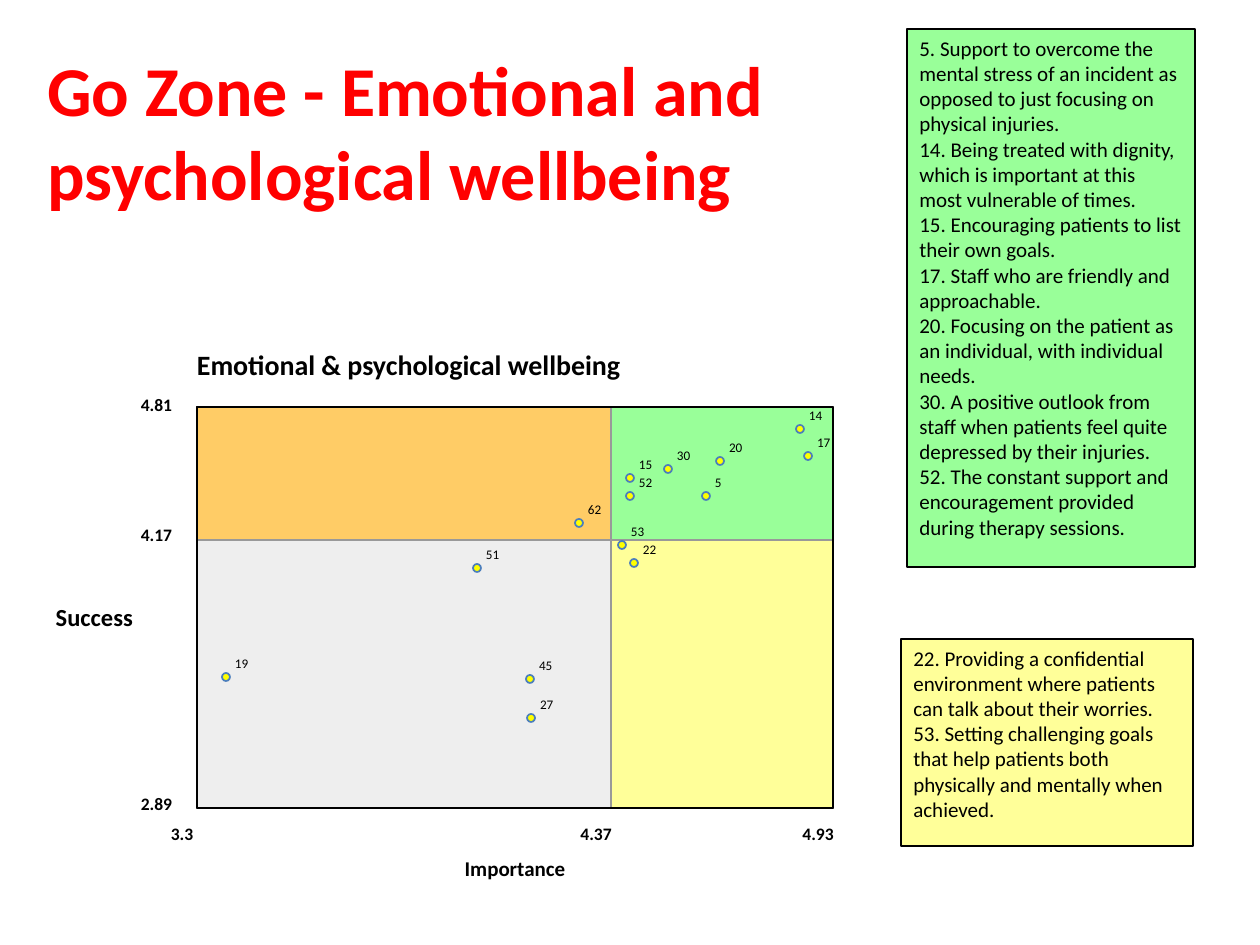
from typing import NamedTuple

from lxml.etree import SubElement
from pptx import Presentation
from pptx.dml.color import RGBColor
from pptx.enum.shapes import MSO_CONNECTOR, MSO_SHAPE
from pptx.enum.text import MSO_ANCHOR, PP_ALIGN
from pptx.oxml.ns import qn
from pptx.util import Emu, Pt

PX = 914400 / 126
FONT = "Calibri"

BLACK = RGBColor(0x00, 0x00, 0x00)
RED = RGBColor(0xFF, 0x00, 0x00)
ORANGE = RGBColor(0xFF, 0xCC, 0x66)
GREEN = RGBColor(0x99, 0xFF, 0x99)
GREY = RGBColor(0xEE, 0xEE, 0xEE)
YELLOW = RGBColor(0xFF, 0xFF, 0x99)
DIVIDER = RGBColor(0x99, 0x99, 0x99)
DOT_FILL = RGBColor(0xFF, 0xFF, 0x00)
DOT_LINE = RGBColor(0x4B, 0x7E, 0xBC)

# Plot edges and the dividers between its zones
LEFT, MID_X, RIGHT = 197, 611, 833
TOP, MID_Y, BOTTOM = 407, 540, 808
DOT = 8


class Box(NamedTuple):
    left: int
    top: int
    width: int
    height: int


class Zone(NamedTuple):
    box: Box
    fill: RGBColor


class Statement(NamedTuple):
    number: str
    x: int
    y: int


class Label(NamedTuple):
    text: str
    x: int
    y: int
    size: float
    align: PP_ALIGN = PP_ALIGN.LEFT
    bold: bool = True


class Note(NamedTuple):
    box: Box
    fill: RGBColor
    lines: tuple[str, ...]


# Share of a label's width that lies left of its anchor point
SHARE_LEFT = {PP_ALIGN.LEFT: 0, PP_ALIGN.CENTER: 0.5, PP_ALIGN.RIGHT: 1}

ZONES = (
    Zone(Box(LEFT, TOP, MID_X - LEFT, MID_Y - TOP), ORANGE),
    Zone(Box(MID_X, TOP, RIGHT - MID_X, MID_Y - TOP), GREEN),
    Zone(Box(LEFT, MID_Y, MID_X - LEFT, BOTTOM - MID_Y), GREY),
    Zone(Box(MID_X, MID_Y, RIGHT - MID_X, BOTTOM - MID_Y), YELLOW),
)

STATEMENTS = (
    Statement("5", 706, 496),
    Statement("14", 800, 429),
    Statement("15", 630, 478),
    Statement("17", 808, 456),
    Statement("20", 720, 461),
    Statement("30", 668, 469),
    Statement("52", 630, 496),
    Statement("19", 226, 677),
    Statement("27", 531, 718),
    Statement("45", 530, 679),
    Statement("51", 477, 568),
    Statement("22", 634, 563),
    Statement("53", 622, 545),
    Statement("62", 579, 523),
)

LABELS = (
    Label("Emotional & psychological wellbeing", LEFT, 348, 16),
    Label("4.81", 172, 394, 10, PP_ALIGN.RIGHT),
    Label("4.17", 172, 524, 10, PP_ALIGN.RIGHT),
    Label("2.89", 172, 793, 10, PP_ALIGN.RIGHT),
    Label("Success", 133, 602, 14, PP_ALIGN.RIGHT),
    Label("3.3", 182, 823, 10, PP_ALIGN.CENTER),
    Label("4.37", 596, 823, 10, PP_ALIGN.CENTER),
    Label("4.93", 818, 823, 10, PP_ALIGN.CENTER),
    Label("Importance", 515, 856, 12, PP_ALIGN.CENTER),
)

NOTES = (
    Note(Box(907, 29, 288, 538), GREEN, (
        "5. Support to overcome the mental stress of an incident as opposed to "
        "just focusing on physical injuries.",
        "14. Being treated with dignity, which is important at this most "
        "vulnerable of times.",
        "15. Encouraging patients to list their own goals.",
        "17. Staff who are friendly and approachable.",
        "20. Focusing on the patient as an individual, with individual needs.",
        "30. A positive outlook from staff when patients feel quite depressed "
        "by their injuries.",
        "52. The constant support and encouragement provided during therapy "
        "sessions.",
    )),
    Note(Box(901, 639, 292, 207), YELLOW, (
        "22. Providing a confidential environment where patients can talk "
        "about their worries.",
        "53. Setting challenging goals that help patients both physically and "
        "mentally when achieved.",
    )),
)


def px(length: float) -> Emu:
    return Emu(round(length * PX))


def add_run(paragraph, text: str, size: float, color=BLACK, bold=False) -> None:
    run = paragraph.add_run()
    run.text = text
    run.font.name = FONT
    run.font.size = Pt(size)
    run.font.bold = bold
    run.font.color.rgb = color


def add_outlined(slide, kind, box: Box, fill, line=BLACK, weight=1.0):
    shape = slide.shapes.add_shape(kind, *map(px, box))
    shape.shadow.inherit = False
    if fill is None:
        shape.fill.background()
    else:
        shape.fill.solid()
        shape.fill.fore_color.rgb = fill
    shape.line.color.rgb = line
    shape.line.width = Pt(weight)
    return shape


def add_divider(slide, x1: int, y1: int, x2: int, y2: int) -> None:
    divider = slide.shapes.add_connector(
        MSO_CONNECTOR.STRAIGHT, px(x1), px(y1), px(x2), px(y2))
    divider.line.color.rgb = DIVIDER
    divider.line.width = Pt(1)
    SubElement(divider._element.spPr, qn("a:effectLst"))


def add_label(slide, label: Label) -> None:
    """Place one line of text whose alignment is taken about the point x, y."""
    width = round(len(label.text) * label.size * 1.1)
    height = round(label.size * 2.14)
    left = label.x - width * SHARE_LEFT[label.align]
    box = slide.shapes.add_textbox(*map(px, (left, label.y, width, height)))
    frame = box.text_frame
    frame.margin_left = frame.margin_right = 0
    frame.margin_top = frame.margin_bottom = 0
    frame.word_wrap = True
    paragraph = frame.paragraphs[0]
    paragraph.alignment = label.align
    add_run(paragraph, label.text, label.size, bold=label.bold)


def add_statement(slide, statement: Statement) -> None:
    number, x, y = statement
    add_outlined(slide, MSO_SHAPE.OVAL,
                 Box(x - DOT // 2, y - DOT // 2, DOT, DOT), DOT_FILL, DOT_LINE)
    add_label(slide, Label(number, x + 9, y - 22, 7.5, bold=False))


def add_note(slide, note: Note) -> None:
    shape = add_outlined(slide, MSO_SHAPE.RECTANGLE, note.box, note.fill, weight=0.75)
    frame = shape.text_frame
    frame.word_wrap = True
    frame.vertical_anchor = MSO_ANCHOR.TOP
    paragraph = frame.paragraphs[0]
    paragraph.alignment = PP_ALIGN.LEFT
    for index, line in enumerate(note.lines):
        if index:
            paragraph.add_line_break()
        add_run(paragraph, line, 12)


def add_title(slide, text: str) -> None:
    frame = slide.shapes.add_textbox(*map(px, Box(35, 71, 897, 118))).text_frame
    frame.word_wrap = True
    frame.vertical_anchor = MSO_ANCHOR.MIDDLE
    add_run(frame.paragraphs[0], text, 40, RED, bold=True)


def main() -> None:
    deck = Presentation()
    deck.slide_width, deck.slide_height = px(1260), px(945)
    slide = deck.slides.add_slide(deck.slide_layouts[6])
    add_title(slide, "Go Zone - Emotional and psychological wellbeing")
    for zone in ZONES:
        add_outlined(slide, MSO_SHAPE.RECTANGLE, zone.box, zone.fill)
    add_divider(slide, MID_X, BOTTOM, MID_X, TOP)
    add_divider(slide, LEFT, MID_Y, RIGHT, MID_Y)
    add_outlined(slide, MSO_SHAPE.RECTANGLE,
                 Box(LEFT, TOP, RIGHT - LEFT, BOTTOM - TOP), None)
    for statement in STATEMENTS:
        add_statement(slide, statement)
    for label in LABELS:
        add_label(slide, label)
    for note in NOTES:
        add_note(slide, note)
    deck.save("out.pptx")


if __name__ == "__main__":
    main()
